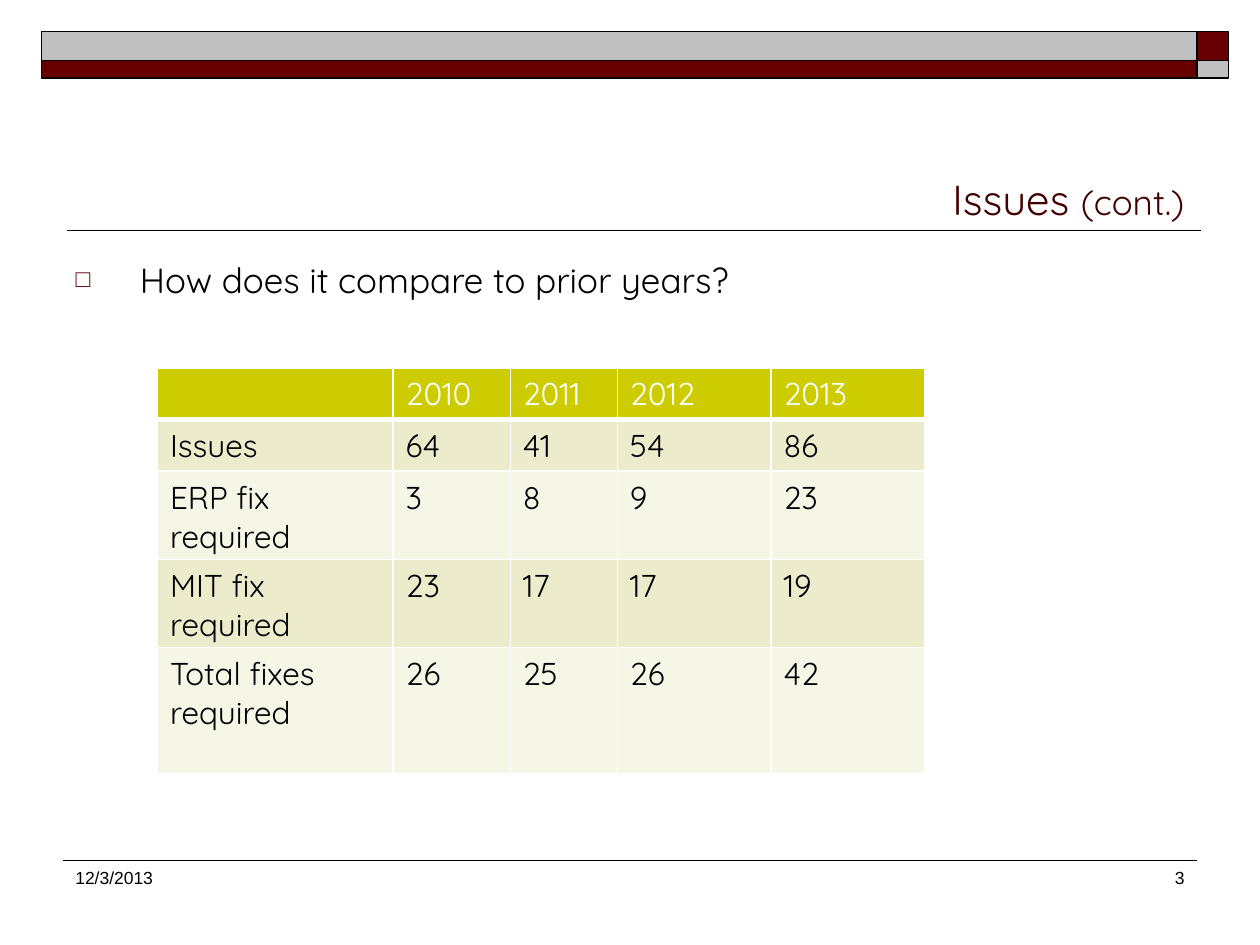
from lxml.etree import SubElement
from pptx import Presentation
from pptx.dml.color import RGBColor
from pptx.enum.shapes import MSO_CONNECTOR, MSO_SHAPE
from pptx.enum.text import MSO_ANCHOR, MSO_AUTO_SIZE, PP_ALIGN
from pptx.oxml.ns import qn
from pptx.util import Inches, Pt

COLORS = {
    "maroon": "660000",
    "title": "420000",
    "silver": "C0C0C0",
    "black": "000000",
    "white": "FFFFFF",
    "header": "CCCC00",
    "band": "ECECCC",
    "light_band": "F6F6E7",
}
ISSUES = [
    ["", "2010", "2011", "2012", "2013"],
    ["Issues", "64", "41", "54", "86"],
    ["ERP fix required", "3", "8", "9", "23"],
    ["MIT fix required", "23", "17", "17", "19"],
    ["Total fixes required", "26", "25", "26", "42"],
]
COLUMN_WIDTHS = [1.87, 0.93, 0.85, 1.22, 1.22]
ROW_HEIGHTS = [0.41, 0.41, 0.7, 0.7, 1]


def rgb(name):
    return RGBColor.from_string(COLORS[name])


def inches(*lengths):
    return [Inches(length) for length in lengths]


def add_text(paragraph, text, size=18, font="Quicksand", color="black", align=None):
    if align is not None:
        paragraph.alignment = align
    run = paragraph.add_run()
    run.text = text
    run.font.size = Pt(size)
    run.font.name = font
    run.font.color.rgb = rgb(color)


def add_bar(slide, box, color):
    bar = slide.shapes.add_shape(MSO_SHAPE.RECTANGLE, *inches(*box))
    bar.shadow.inherit = False
    bar.fill.solid()
    bar.fill.fore_color.rgb = rgb(color)
    bar.line.color.rgb = rgb("black")
    bar.line.width = Pt(1)


def add_rule(slide, left, right, y, width):
    rule = slide.shapes.add_connector(
        MSO_CONNECTOR.STRAIGHT, *inches(left, y, right, y)
    )
    rule.line.color.rgb = rgb("black")
    rule.line.width = Pt(width)
    SubElement(rule._element.spPr, qn("a:effectLst"))


def place_placeholder(placeholder, box, anchor):
    placeholder.left, placeholder.top, placeholder.width, placeholder.height = inches(*box)
    frame = placeholder.text_frame
    frame.auto_size = MSO_AUTO_SIZE.NONE
    frame.vertical_anchor = anchor
    return frame.paragraphs[0]


def add_bullet(paragraph):
    paragraph.space_before = Pt(0)
    properties = paragraph._p.get_or_add_pPr()
    properties.set("marL", str(Inches(0.51)))
    properties.set("indent", str(-Inches(0.51)))
    bullet_color = SubElement(properties, qn("a:buClr"))
    SubElement(bullet_color, qn("a:srgbClr"), val=COLORS["maroon"])
    SubElement(properties, qn("a:buSzPct"), val="70000")
    SubElement(properties, qn("a:buChar"), char="□")


def add_footer(slide, box, text, align):
    footer = slide.shapes.add_textbox(*inches(*box))
    footer.text_frame.word_wrap = True
    add_text(footer.text_frame.paragraphs[0], text, size=10, font="Arial", align=align)


def format_cell(cell, fill, bottom_width):
    properties = cell._tc.get_or_add_tcPr()
    for side, width in (("L", 1), ("R", 1), ("T", 1), ("B", bottom_width)):
        border = SubElement(properties, qn(f"a:ln{side}"), w=str(Pt(width)))
        border_fill = SubElement(border, qn("a:solidFill"))
        SubElement(border_fill, qn("a:srgbClr"), val=COLORS["white"])
    cell.fill.solid()
    cell.fill.fore_color.rgb = rgb(fill)


def add_issue_table(slide):
    table = slide.shapes.add_table(
        len(ROW_HEIGHTS), len(COLUMN_WIDTHS),
        *inches(1.25, 2.92, sum(COLUMN_WIDTHS), sum(ROW_HEIGHTS)),
    ).table
    for column, width in zip(table.columns, COLUMN_WIDTHS):
        column.width = Inches(width)
    for index, (row, height, values) in enumerate(zip(table.rows, ROW_HEIGHTS, ISSUES)):
        row.height = Inches(height)
        is_header = index == 0
        fill = "header" if is_header else "band" if index % 2 else "light_band"
        for cell, value in zip(row.cells, values):
            format_cell(cell, fill, 3 if is_header else 1)
            if value:
                add_text(cell.text_frame.paragraphs[0], value,
                         color="white" if is_header else "black")


def main():
    deck = Presentation()
    deck.slide_width, deck.slide_height = inches(10, 7.5)
    slide = deck.slides.add_slide(deck.slide_layouts[1])

    add_rule(slide, 0.53, 9.53, 1.83, 1)
    for top, height, wide_color, corner_color in (
        (0.25, 0.23, "silver", "maroon"),
        (0.48, 0.14, "maroon", "silver"),
    ):
        add_bar(slide, (0.33, top, 9.17, height), wide_color)
        add_bar(slide, (9.5, top, 0.25, height), corner_color)
    add_rule(slide, 0.5, 9.5, 6.83, 0.75)

    title = place_placeholder(slide.shapes.title, (0.5, 0.58, 9, 1.25), MSO_ANCHOR.BOTTOM)
    add_text(title, "Issues ", size=24, color="title", align=PP_ALIGN.RIGHT)
    add_text(title, "(cont.)", size=20, color="title")

    question = place_placeholder(slide.placeholders[1], (0.5, 2, 9, 4.7), MSO_ANCHOR.TOP)
    add_bullet(question)
    add_text(question, "How does it compare to prior years?", size=20)

    add_footer(slide, (0.5, 6.83, 1.83, 0.5), "12/3/2013", PP_ALIGN.LEFT)
    add_footer(slide, (7.42, 6.83, 2.08, 0.5), "3", PP_ALIGN.RIGHT)
    add_issue_table(slide)
    deck.save("out.pptx")


if __name__ == "__main__":
    main()
